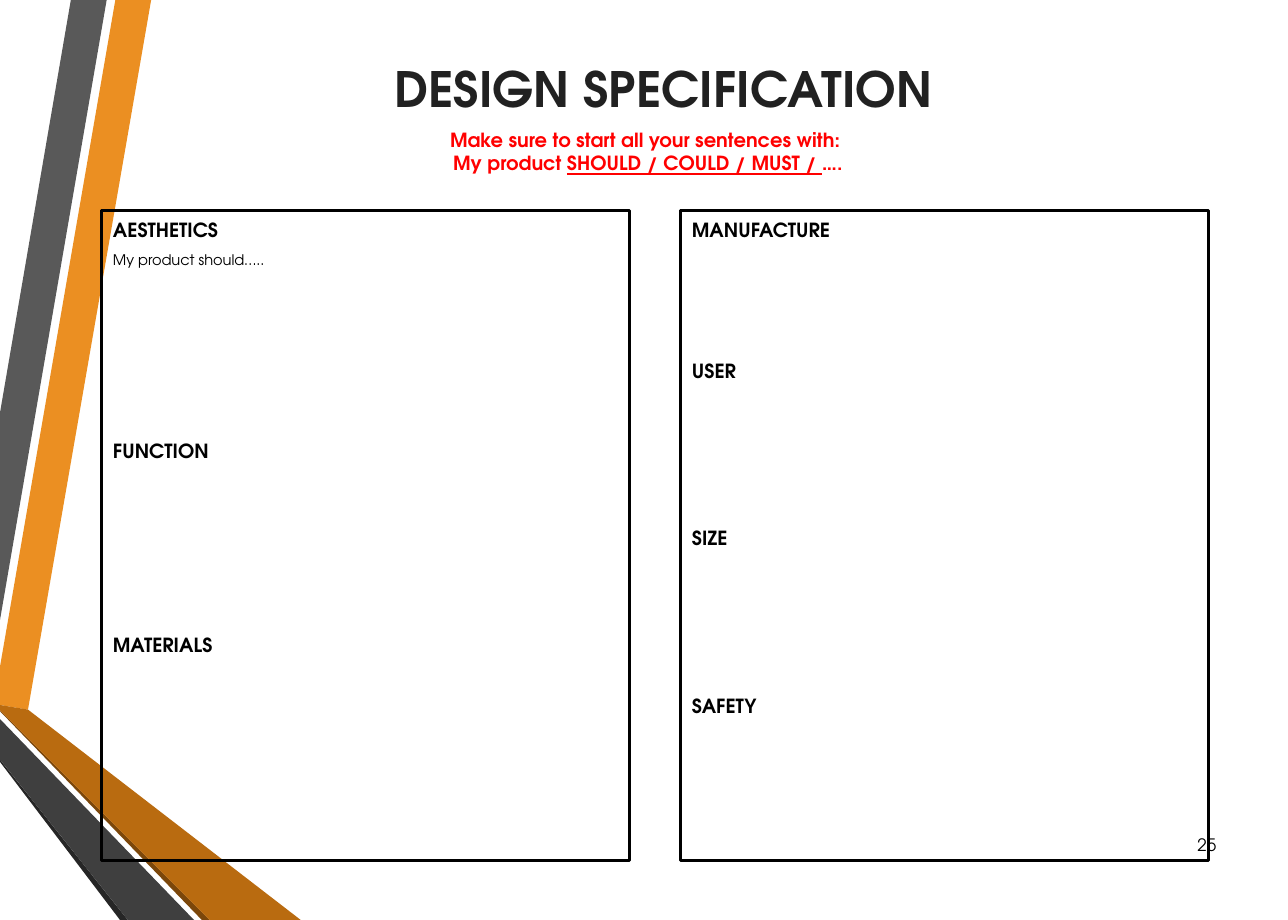
from pptx import Presentation
from pptx import util as u
from pptx.dml import color
from pptx.enum import shapes, text

FONT = "TeX Gyre Adventor"
WIDTH, HEIGHT = 1190.16, 850.32
BLACK, RED, CHARCOAL = "000000", "FF0000", "212121"
NARROW, WIDE = (7.2, 3.6), (10.8, 5)

RIBBONS = [
    ("EB8F22", [(0, 616.3), (0, 651.6), (25.9, 655.9), (139.7, 0), (106.6, 0)]),
    ("595959", [(98.6, 0), (65.5, 0), (0, 381.6), (0, 573.1)]),
    ("262626", [(0, 702), (0, 704.2), (110.9, HEIGHT), (118.1, HEIGHT)]),
    ("7B470B", [(0, 656.6), (0, 657.4), (186.5, HEIGHT), (193.7, HEIGHT)]),
    ("B96B10", [(0, 656.6), (193.7, HEIGHT), (277.9, HEIGHT), (25.9, 655.9), (0, 651.6)]),
    ("3F3F3F", [(0, 702), (118.1, HEIGHT), (179.3, HEIGHT), (0, 664.6)]),
]

TITLE = "DESIGN SPECIFICATION"
HINT = [
    [("Make sure to start all your sentences with: ", False)],
    [("My product ", False), ("SHOULD / COULD / MUST / ", True), ("….", False)],
]
PAGE_NUMBER = "25"

HEADING, ANSWER = (18, True), (13.5, False)
PANELS = [
    (93.6, [("AESTHETICS", HEADING, 0), ("My product should…..", ANSWER, 0),
            ("FUNCTION", HEADING, 6), ("MATERIALS", HEADING, 6)]),
    (628.6, [("MANUFACTURE", HEADING, 0), ("USER", HEADING, 4),
             ("SIZE", HEADING, 5), ("SAFETY", HEADING, 5)]),
]
PANEL_TOP, PANEL_WIDTH, PANEL_HEIGHT = 194.4, 488.2, 601.2
GAP, ANSWER_LINE = 7, 24.8


def rgb(code):
    return color.RGBColor.from_string(code)


def set_frame(box, insets, anchor=text.MSO_ANCHOR.TOP):
    frame = box.text_frame
    frame.word_wrap = True
    frame.vertical_anchor = anchor
    frame.margin_left = frame.margin_right = u.Pt(insets[0])
    frame.margin_top = frame.margin_bottom = u.Pt(insets[1])
    return frame


def add_para(frame, index, align, spacing=1.0, before=0):
    para = frame.add_paragraph() if index else frame.paragraphs[0]
    para.alignment = align
    para.line_spacing = spacing
    para.space_before = u.Pt(before)
    return para


def add_span(para, words, size, code, bold=False, underline=False):
    span = para.add_run()
    span.text = words
    font = span.font
    font.name, font.size, font.bold = FONT, u.Pt(size), bold
    font.underline = underline
    font.color.rgb = rgb(code)


def add_text(page, place, insets, anchor=text.MSO_ANCHOR.TOP):
    return set_frame(page.shapes.add_textbox(*map(u.Pt, place)), insets, anchor)


def add_ribbon(page, code, points):
    corners = [(u.Pt(x), u.Pt(y)) for x, y in points]
    builder = page.shapes.build_freeform(*corners[0])
    builder.add_line_segments(corners[1:], close=True)
    ribbon = builder.convert_to_shape()
    ribbon.shadow.inherit = False
    ribbon.fill.solid()
    ribbon.fill.fore_color.rgb = rgb(code)
    ribbon.line.fill.background()


def add_panel(page, left, entries):
    place = (left, PANEL_TOP, PANEL_WIDTH, PANEL_HEIGHT)
    panel = page.shapes.add_shape(shapes.MSO_SHAPE.RECTANGLE, *map(u.Pt, place))
    panel.shadow.inherit = False
    panel.fill.background()
    panel.line.color.rgb = rgb(BLACK)
    panel.line.width = u.Pt(3)
    frame = set_frame(panel, WIDE)
    for index, (words, (size, bold), answer_lines) in enumerate(entries):
        before = GAP + answer_lines * ANSWER_LINE if index else 0
        para = add_para(frame, index, text.PP_ALIGN.LEFT, 1.1, before)
        add_span(para, words, size, BLACK, bold)


def main():
    deck = Presentation()
    deck.slide_width, deck.slide_height = u.Pt(WIDTH), u.Pt(HEIGHT)
    page = deck.slides.add_slide(deck.slide_layouts[6])

    for code, points in RIBBONS:
        add_ribbon(page, code, points)

    frame = add_text(page, (1077.1, 758.2, 54, 45.4), NARROW, text.MSO_ANCHOR.MIDDLE)
    add_span(add_para(frame, 0, text.PP_ALIGN.RIGHT), PAGE_NUMBER, 15.8, BLACK)

    for left, entries in PANELS:
        add_panel(page, left, entries)

    frame = add_text(page, (139.7, 55.4, 946.8, 59), WIDE)
    add_span(add_para(frame, 0, text.PP_ALIGN.CENTER, 0.9), TITLE, 45, CHARCOAL, True)

    frame = add_text(page, (301, 114.5, 595.4, 51.1), NARROW)
    for index, spans in enumerate(HINT):
        para = add_para(frame, index, text.PP_ALIGN.CENTER)
        for words, underline in spans:
            add_span(para, words, 18, RED, True, underline)

    deck.save("out.pptx")


if __name__ == "__main__":
    main()
